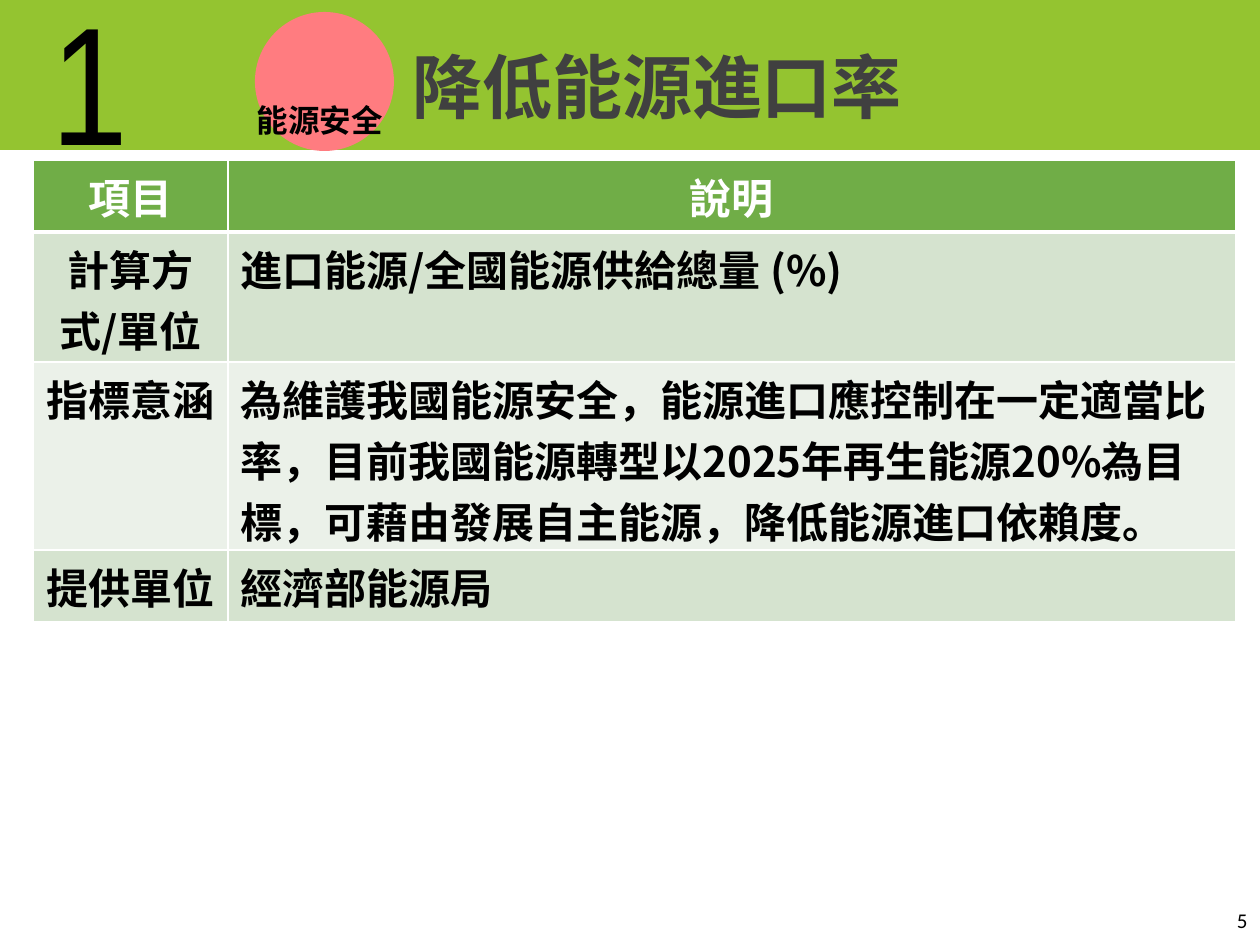
from dataclasses import dataclass

from lxml.etree import SubElement
from pptx import Presentation
from pptx.dml.color import RGBColor as Rgb
from pptx.enum.shapes import MSO_SHAPE as Shape
from pptx.enum.text import MSO_ANCHOR as Anchor, MSO_AUTO_SIZE as AutoSize, PP_ALIGN as Align
from pptx.oxml import parse_xml
from pptx.oxml.ns import nsdecls, qn
from pptx.util import Emu, Pt

PX = 914400 // 126


@dataclass(frozen=True)
class Theme:
    cjk: str = "Noto Sans CJK SC"
    numeral: str = "Arial Narrow"
    plain: str = "Calibri"
    black: str = "000000"
    white: str = "FFFFFF"
    title: str = "404040"
    band: str = "94C430"
    badge: str = "FF7C80"
    header: str = "70AD47"
    stripes: tuple = ("D5E3CF", "EBF1E9")
    numeral_size: int = 96
    title_size: int = 40
    table_size: int = 24
    badge_size: int = 18
    page_size: int = 12


class Deck:
    """Draws styled elements on the current slide, measured in px."""

    def __init__(self, theme, width, height):
        self.theme = theme
        self.presentation = Presentation()
        self.presentation.slide_width = Emu(width * PX)
        self.presentation.slide_height = Emu(height * PX)
        self.slide = self.presentation.slides.add_slide(self.presentation.slide_layouts[6])

    def place(self, box):
        return [Emu(length * PX) for length in box]

    def style(self, paragraph, size, color, face, bold, align):
        paragraph.alignment = align
        font = paragraph.font
        font.size, font.bold, font.name = Pt(size), bold, face
        font.color.rgb = Rgb.from_string(color)
        defaults = paragraph._p.pPr.find(qn("a:defRPr"))
        SubElement(defaults, qn("a:ea")).set("typeface", face)

    def shape(self, kind, box, color):
        shape = self.slide.shapes.add_shape(kind, *self.place(box))
        shape.shadow.inherit = False
        shape.fill.solid()
        shape.fill.fore_color.rgb = Rgb.from_string(color)
        shape.line.fill.background()

    def text(self, words, box, size, color, face, bold=False, align=Align.LEFT,
             wrap=True, anchor=Anchor.TOP, fit=AutoSize.SHAPE_TO_FIT_TEXT):
        frame = self.slide.shapes.add_textbox(*self.place(box)).text_frame
        frame.word_wrap, frame.auto_size, frame.vertical_anchor = wrap, fit, anchor
        frame.text = words
        self.style(frame.paragraphs[0], size, color, face, bold, align)

    def borders(self, cell, top, bottom):
        widths = {"lnL": 1, "lnR": 1, "lnT": top, "lnB": bottom}
        for position, (side, width) in enumerate(widths.items()):
            cell._tc.get_or_add_tcPr().insert(position, parse_xml(
                f'<a:{side} {nsdecls("a")} w="{Pt(width)}"><a:solidFill>'
                f'<a:srgbClr val="{self.theme.white}"/></a:solidFill></a:{side}>'))

    def table(self, rows, left, top, widths, heights):
        theme = self.theme
        box = self.place((left, top, sum(widths), sum(heights)))
        grid = self.slide.shapes.add_table(len(rows), len(widths), *box).table
        for column, width in zip(grid.columns, widths):
            column.width = Emu(width * PX)
        for r, (entries, height) in enumerate(zip(rows, heights)):
            grid.rows[r].height = Emu(height * PX)
            fill = theme.stripes[(r - 1) % 2] if r else theme.header
            color = theme.black if r else theme.white
            for c, words in enumerate(entries):
                cell = grid.cell(r, c)
                cell.text = words
                cell.fill.solid()
                cell.fill.fore_color.rgb = Rgb.from_string(fill)
                self.borders(cell, 3 if r == 1 else 1, 1 if r else 3)
                align = Align.LEFT if r and c else Align.CENTER
                self.style(cell.text_frame.paragraphs[0], theme.table_size,
                           color, theme.cjk, True, align)


def main():
    theme = Theme()
    deck = Deck(theme, 1260, 945)
    deck.text("5", (976, 895, 284, 50), theme.page_size, theme.black, theme.plain,
              align=Align.RIGHT, anchor=Anchor.MIDDLE, fit=AutoSize.NONE)
    deck.shape(Shape.RECTANGLE, (0, 0, 1260, 150), theme.band)
    deck.shape(Shape.OVAL, (255, 12, 139, 139), theme.badge)
    deck.text("降低能源進口率", (400, 37, 1187, 97), theme.title_size, theme.title,
              theme.cjk, bold=True)
    indicator = [
        ("項目", "說明"),
        ("計算方式/單位", "進口能源/全國能源供給總量 (%)"),
        ("指標意涵", "為維護我國能源安全，能源進口應控制在一定適當比率，"
                 "目前我國能源轉型以2025年再生能源20%為目標，"
                 "可藉由發展自主能源，降低能源進口依賴度。"),
        ("提供單位", "經濟部能源局"),
    ]
    deck.table(indicator, 33, 160, (195, 1008), (72, 130, 188, 72))
    deck.text("1", (39, -29, 265, 217), theme.numeral_size, theme.black, theme.numeral)
    deck.text("能源安全", (244, 95, 152, 50), theme.badge_size, theme.black, theme.cjk,
              bold=True, align=Align.CENTER, wrap=False)
    deck.presentation.save("out.pptx")


if __name__ == "__main__":
    main()
